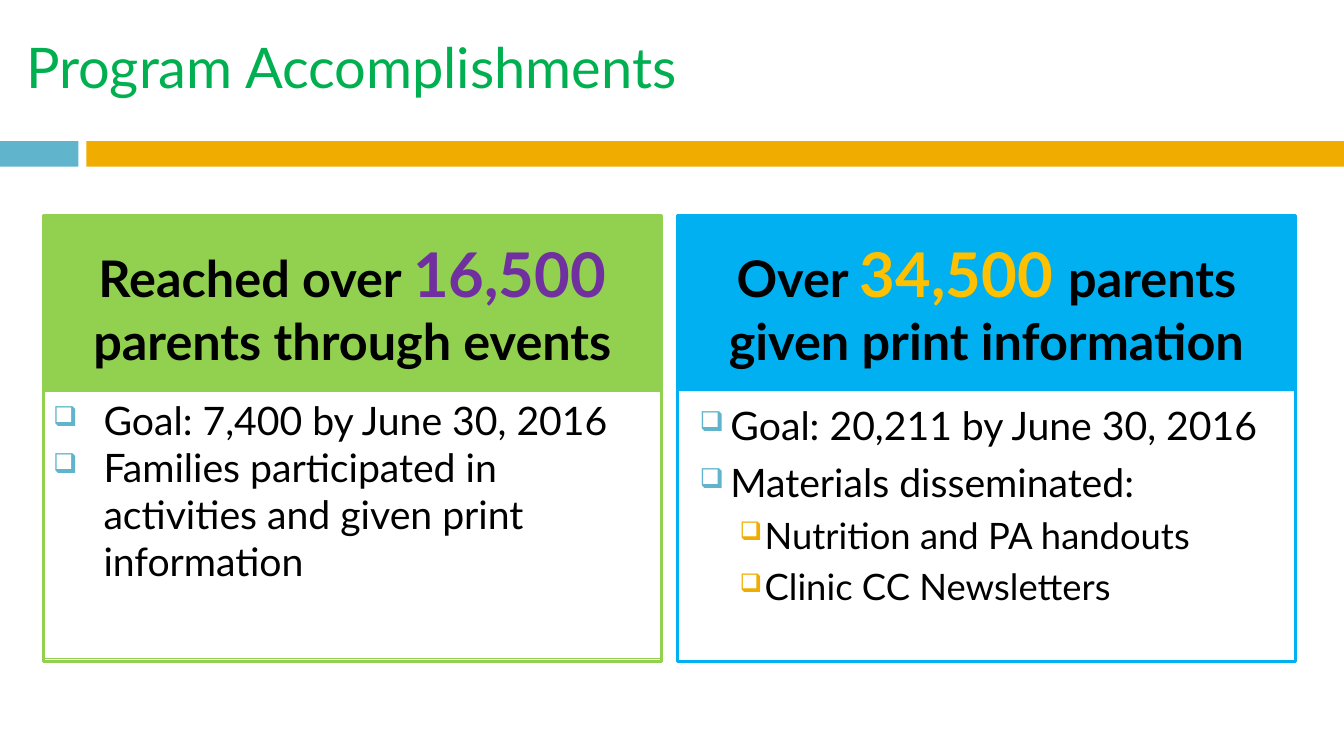
from lxml import etree
from pptx import Presentation
from pptx.dml.color import RGBColor
from pptx.enum import shapes, text
from pptx.oxml.ns import qn
from pptx.util import Cm, Pt

FONT = "Lato"
BLACK = RGBColor(0x00, 0x00, 0x00)
TITLE_GREEN = RGBColor(0x00, 0xB0, 0x50)
TEAL = RGBColor(0x60, 0xB5, 0xCC)
AMBER = RGBColor(0xF0, 0xAD, 0x00)
LIME = RGBColor(0x92, 0xD0, 0x50)
SKY = RGBColor(0x00, 0xB0, 0xF0)
PURPLE = RGBColor(0x70, 0x30, 0xA0)
GOLD = RGBColor(0xFF, 0xC0, 0x00)

presentation = Presentation()
presentation.slide_width, presentation.slide_height = Cm(33.87), Cm(19.05)
slide = presentation.slides.add_slide(presentation.slide_layouts[6])


def add_box(left, top, width, height, fill=None, line=None, line_width=0,
            anchor=text.MSO_ANCHOR.MIDDLE, inset=0.25):
    """Add a rectangle, measured in cm, and return its text frame."""
    shape = slide.shapes.add_shape(shapes.MSO_SHAPE.RECTANGLE,
                                   Cm(left), Cm(top), Cm(width), Cm(height))
    shape.shadow.inherit = False
    for part, color in ((shape.fill, fill), (shape.line.fill, line)):
        if color is None:
            part.background()
        else:
            part.solid()
            part.fore_color.rgb = color
    if line is not None:
        shape.line.width = Pt(line_width)
    frame = shape.text_frame
    settings = {"word_wrap": True, "vertical_anchor": anchor,
                "margin_left": Cm(0.25), "margin_right": Cm(0.25),
                "margin_top": Cm(inset), "margin_bottom": Cm(inset)}
    for name, value in settings.items():
        setattr(frame, name, value)
    return frame


def add_run(paragraph, words, size, color=BLACK, bold=False):
    run = paragraph.add_run()
    run.text = words
    settings = {"name": FONT, "size": Pt(size), "bold": bold}
    for name, value in settings.items():
        setattr(run.font, name, value)
    run.font.color.rgb = color


# Title and divider bar
add_box(0, 3.56, 1.98, 0.64, fill=TEAL)
add_box(2.18, 3.56, 31.69, 0.64, fill=AMBER)
title = add_box(0.41, 0.46, 30.2, 2.41).paragraphs[0]
title.alignment = text.PP_ALIGN.LEFT
add_run(title, "Program Accomplishments", 40, TITLE_GREEN)

# Bullet styles: text indent and hanging in cm, space before and size in pt
WIDE = {"indent": 1.27, "hanging": 1.27, "space": 0, "size": 28, "bullet": TEAL, "level": 0}
NARROW = {"indent": 1.09, "hanging": 0.78, "space": 7, "size": 28, "bullet": TEAL, "level": 0}
SUB = {"indent": 1.95, "hanging": 0.63, "space": 5.5, "size": 26, "bullet": AMBER, "level": 1}

cards = [
    {"left": 1.09, "color": LIME, "body_line": LIME, "inset": 0.13, "body_height": 6.73,
     "heading": [("Reached over ", 36, BLACK), ("16,500 ", 44, PURPLE),
                 ("parents through events", 36, BLACK)],
     "items": [("Goal: 7,400 by June 30, 2016", WIDE),
               ("Families participated in activities and given print information", WIDE)]},
    {"left": 17.07, "color": SKY, "body_line": None, "inset": 0.25, "body_height": 6.81,
     "heading": [("Over ", 36, BLACK), ("34,500 ", 44, GOLD),
                 ("parents given print information", 36, BLACK)],
     "items": [("Goal: 20,211 by June 30, 2016", NARROW),
               ("Materials disseminated:", NARROW),
               ("Nutrition and PA handouts", SUB),
               ("Clinic CC Newsletters", SUB)]},
]
CARD_TOP, CARD_WIDTH, CARD_HEIGHT, HEADING_HEIGHT = 5.44, 15.58, 11.23, 4.42

for card in cards:
    body = add_box(card["left"], CARD_TOP + HEADING_HEIGHT, CARD_WIDTH, card["body_height"],
                   line=card["body_line"], line_width=0.75,
                   anchor=text.MSO_ANCHOR.TOP, inset=card["inset"])
    for index, (words, style) in enumerate(card["items"]):
        paragraph = body.add_paragraph() if index else body.paragraphs[0]
        paragraph.alignment = text.PP_ALIGN.LEFT
        paragraph.level = style["level"]
        if index:
            paragraph.space_before = Pt(style["space"])
        properties = paragraph._p.get_or_add_pPr()
        properties.set("marL", str(Cm(style["indent"])))
        properties.set("indent", str(-Cm(style["hanging"])))
        bullet_color = etree.SubElement(properties, qn("a:buClr"))
        etree.SubElement(bullet_color, qn("a:srgbClr"), val=str(style["bullet"]))
        etree.SubElement(properties, qn("a:buSzPct"), val="70000")
        etree.SubElement(properties, qn("a:buChar"), char="❑")
        add_run(paragraph, words, style["size"])

    heading = add_box(card["left"], CARD_TOP, CARD_WIDTH, HEADING_HEIGHT,
                      fill=card["color"]).paragraphs[0]
    heading.alignment = text.PP_ALIGN.CENTER
    for words, size, color in card["heading"]:
        add_run(heading, words, size, color, bold=True)

    add_box(card["left"], CARD_TOP, CARD_WIDTH, CARD_HEIGHT, line=card["color"], line_width=2)

presentation.save("out.pptx")
